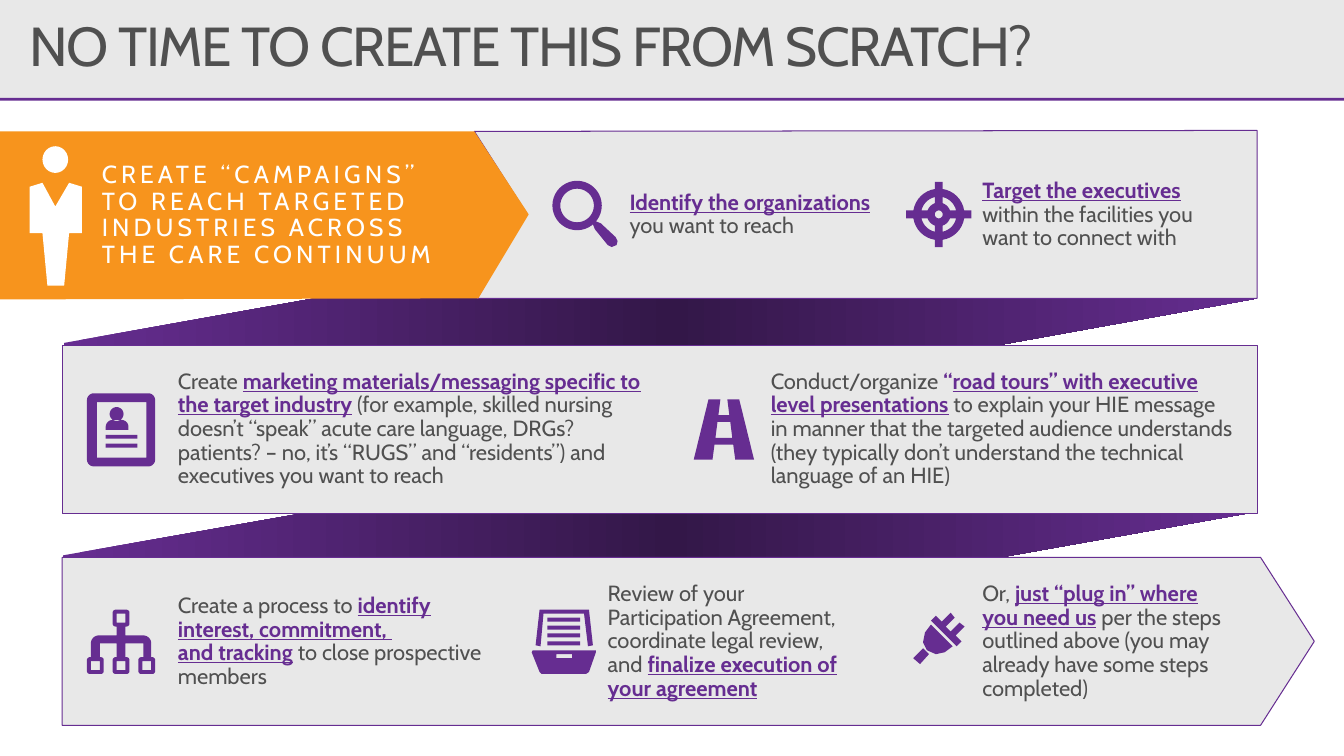
import copy
import math
from dataclasses import dataclass

import pptx
import pptx.dml.color
import pptx.enum.shapes
import pptx.enum.text
import pptx.oxml.ns
import pptx.util
from pptx.util import Inches

Point = tuple[float, float]
Loop = list[Point]

FONT = "Cabin"
PURPLE, DARK, GRAY, ORANGE, WHITE, INK = (
    "662D91", "331748", "E8E8E8", "F7941D", "FFFFFF", "505050")
SHAPE = pptx.enum.shapes.MSO_SHAPE


@dataclass
class Step:
    """Text with *key phrases* between stars, and the loops of its icon."""
    left: float
    top: float
    width: float
    text: str
    icon: list[Loop]


def color(code: str) -> pptx.dml.color.RGBColor:
    return pptx.dml.color.RGBColor.from_string(code)


def arc(x: float, y: float, r: float, start: float = 0, end: float = 360) -> Loop:
    """Points along a circle, with angles in degrees."""
    count = max(4, round(abs(end - start) / 9))
    turns = [math.radians(start + (end - start) * i / count) for i in range(count + 1)]
    return [(x + r * math.cos(t), y + r * math.sin(t)) for t in turns]


def box(x: float, y: float, w: float, h: float, r: float = 0) -> Loop:
    """A rectangle with corners rounded by r."""
    if not r:
        return [(x, y), (x + w, y), (x + w, y + h), (x, y + h)]
    spots = [(x + w - r, y + h - r), (x + r, y + h - r), (x + r, y + r), (x + w - r, y + r)]
    return [p for i, (cx, cy) in enumerate(spots) for p in arc(cx, cy, r, 90 * i, 90 * i + 90)]


def card() -> list[Loop]:
    lines = [box(1.07, y, 0.32, 0.04) for y in (4.4, 4.49)]
    bust = arc(1.14, 4.32, 0.07, 180, 270) + arc(1.23, 4.32, 0.07, 270, 360)
    return [box(0.88, 3.98, 0.69, 0.74, 0.07), box(0.98, 4.07, 0.5, 0.56), *lines,
            arc(1.18, 4.19, 0.07), bust + [(1.3, 4.35), (1.07, 4.35)]]


def lens() -> list[Loop]:
    grip = [(6, 2.27), (6.03, 2.24), (6.08, 2.26), (6.23, 2.4), (6.25, 2.44),
            (6.24, 2.48), (6.19, 2.5), (6.15, 2.48), (6.02, 2.32)]
    return [arc(5.84, 2.08, 0.25), arc(5.84, 2.08, 0.17), grip]


def target() -> list[Loop]:
    x, y, half, reach = 9.5, 2.17, 0.04, 0.33

    def bend(r: float, turn: int) -> Loop:
        gap = math.degrees(math.asin(half / r))
        return arc(x, y, r, turn + gap, turn + 90 - gap)

    edge, gaps = [], []
    for turn in range(0, 360, 90):
        c, s = round(math.cos(math.radians(turn))), round(math.sin(math.radians(turn)))
        edge += [(x + reach * c - side * s, y + reach * s + side * c) for side in (-half, half)]
        edge += bend(0.26, turn)
        gaps.append(bend(0.18, turn) + bend(0.12, turn)[::-1])
    return [edge, *gaps, arc(x, y, half)]


def road() -> list[Loop]:
    edge = [(7.44, 4.65), (7.63, 4.65), (7.48, 4.04), (7.36, 4.04), (7.38, 4.2), (7.27, 4.2),
            (7.29, 4.04), (7.17, 4.04), (7.02, 4.65), (7.21, 4.65), (7.23, 4.5), (7.42, 4.5)]
    return [edge, [(7.24, 4.43), (7.26, 4.27), (7.39, 4.27), (7.41, 4.43)]]


def tree() -> list[Loop]:
    nodes = [(1.14, 6.17), (0.88, 6.65), (1.14, 6.65), (1.4, 6.65)]
    loops = [box(x, y, 0.17, 0.17, 0.03) for x, y in nodes]
    loops += [box(x + 0.04, y + 0.04, 0.09, 0.09) for x, y in nodes]
    beam = arc(1, 6.51, 0.08, 180, 270) + arc(1.45, 6.51, 0.08, 270, 360)
    beam += [(1.53, 6.65), (1.45, 6.65), (1.45, 6.51), (1.27, 6.51), (1.27, 6.65),
             (1.18, 6.65), (1.18, 6.51), (1.01, 6.51), (1.01, 6.65), (0.92, 6.65)]
    return loops + [beam, box(1.18, 6.34, 0.09, 0.09)]


def tray() -> list[Loop]:
    sheet = [(5.96, 6.17), (6, 6.53), (5.95, 6.54), (5.91, 6.21),
             (5.5, 6.21), (5.47, 6.54), (5.42, 6.53), (5.46, 6.17)]
    base = [(5.39, 6.58), (6.03, 6.58), (6.03, 6.6), (5.96, 6.8), (5.93, 6.82),
            (5.48, 6.82), (5.46, 6.8), (5.38, 6.6)]
    lines = [box(5.54, 6.25 + 0.08 * i, 0.33, 0.04) for i in range(4)]
    return [sheet, *lines, base, box(5.63, 6.62, 0.16, 0.04)]


def plug() -> list[Loop]:
    prongs = [(9.76, 6.34), (9.71, 6.3), (9.62, 6.39), (9.57, 6.34), (9.66, 6.25), (9.62, 6.2),
              (9.53, 6.29), (9.47, 6.23), (9.42, 6.28), (9.68, 6.54), (9.73, 6.49), (9.67, 6.43)]
    body = [(9.42, 6.32), (9.64, 6.54), (9.56, 6.6), (9.47, 6.62), (9.38, 6.58),
            (9.34, 6.5), (9.36, 6.4)]
    return [prongs, body, [(9.34, 6.56), (9.4, 6.62), (9.31, 6.72), (9.24, 6.66)]]


def paint(shape, fill: str, line: str = ""):
    shape.shadow.inherit = False
    shape.fill.solid()
    shape.fill.fore_color.rgb = color(fill)
    if line:
        shape.line.color.rgb = color(line)
        shape.line.width = pptx.util.Pt(0.75)
    else:
        shape.line.fill.background()
    return shape


def block(kind, left: float, top: float, width: float, height: float, fill: str, line: str = ""):
    shape = slide.shapes.add_shape(kind, *map(Inches, (left, top, width, height)))
    return paint(shape, fill, line)


def trace(loops: list[Loop], fill: str, line: str = ""):
    """Draw closed loops as one shape; inner loops become holes."""
    paths = [[(Inches(x), Inches(y)) for x, y in loop] for loop in loops]
    pen = slide.shapes.build_freeform(*paths[0][0])
    for i, path_points in enumerate(paths):
        if i:
            pen.move_to(*path_points[0])
        pen.add_line_segments(path_points[1:])
    return paint(pen.convert_to_shape(), fill, line)


def ribbon(loop: Loop) -> None:
    shape = trace([loop], PURPLE)
    shape.fill.gradient()
    stops = shape.element.find(".//" + pptx.oxml.ns.qn("a:gsLst"))
    stops.append(copy.deepcopy(stops[0]))
    for stop, place, code in zip(shape.fill.gradient_stops, (0, 0.51, 1), (PURPLE, DARK, PURPLE)):
        stop.position = place
        stop.color.rgb = color(code)
    shape.fill.gradient_angle = 0


def write(shape, text: str, size: int, code: str, track: int = 0) -> None:
    """Fill a shape with text; track is letter spacing in hundredths of a point."""
    frame = shape.text_frame
    frame.word_wrap = True
    frame.auto_size = pptx.enum.text.MSO_AUTO_SIZE.NONE
    frame.vertical_anchor = pptx.enum.text.MSO_ANCHOR.MIDDLE
    frame.margin_left = frame.margin_right = frame.margin_top = frame.margin_bottom = 0
    para = frame.paragraphs[0]
    para.alignment = pptx.enum.text.PP_ALIGN.LEFT
    para.line_spacing = 0.9
    for i, part in enumerate(text.split("*")):
        for j, row in enumerate(part.split("\n")):
            if j:
                para.add_line_break()
            if not row:
                continue
            run = para.add_run()
            run.text = row
            key = i % 2 == 1
            run.font.name, run.font.size = FONT, pptx.util.Pt(size)
            run.font.bold, run.font.underline = key, key and row != "“"
            run.font.color.rgb = color(PURPLE if key else code)
    if track:
        for props in shape.element.iter(pptx.oxml.ns.qn("a:rPr")):
            props.set("spc", str(track))


def label(left: float, top: float, width: float, height: float):
    return slide.shapes.add_textbox(*map(Inches, (left, top, width, height)))


STEPS = [
    Step(6.37, 1.49, 2.79, "*Identify the organizations *you want to reach", lens()),
    Step(9.94, 1.49, 2.6, "*Target the executives *within the facilities you want to connect with", target()),
    Step(1.8, 3.66, 4.75, "Create *marketing materials/messaging specific to the target industry* (for example, skilled nursing doesn’t “speak” acute care language, DRGs? patients? – no, it’s “RUGS” and “residents”) and executives you want to reach", card()),
    Step(7.8, 3.66, 4.7, "Conduct/organize *“**road tours” with executive level presentations* to explain your HIE message in manner that the targeted audience understands (they typically don’t understand the technical language of an HIE)", road()),
    Step(1.8, 5.81, 3.08, "Create a process to *identify interest, commitment, \nand tracking* to close prospective members", tree()),
    Step(6.15, 5.81, 2.44, "Review of your Participation Agreement, coordinate legal review, and *finalize execution of your agreement*", tray()),
    Step(9.94, 5.81, 2.44, "Or, *just “plug in” where you need us* per the steps outlined above (you may already have some steps completed)", plug()),
]

deck = pptx.Presentation()
deck.slide_width, deck.slide_height = Inches(13.6), Inches(7.65)
slide = deck.slides.add_slide(deck.slide_layouts[5])

block(SHAPE.RECTANGLE, 0, 0, 13.6, 0.99, GRAY)
block(SHAPE.RECTANGLE, 0, 0.99, 13.6, 0.03, PURPLE)
title = slide.shapes.title
title.left, title.top, title.width, title.height = map(Inches, (0.3, 0, 11, 0.99))
write(title, "NO TIME TO CREATE THIS FROM SCRATCH?", 40, INK, -100)
title.element.getparent().append(title.element)

ribbon([(0.65, 3.47), (12.72, 1.32), (12.72, 3.02), (0.66, 5.2)])
ribbon([(0.64, 5.62), (12.7, 3.5), (12.71, 5.18), (0.64, 7.33)])
block(SHAPE.PENTAGON, 0.63, 5.64, 12.67, 1.7, GRAY, PURPLE).adjustments[0] = 0.32
block(SHAPE.RECTANGLE, 0.63, 3.5, 12.1, 1.7, GRAY, PURPLE)
trace([[(12.72, 1.32), (12.72, 3.02), (4.83, 3.02), (5.33, 2.16), (4.8, 1.33)]], GRAY, PURPLE)

for step in STEPS:
    write(label(step.left, step.top, step.width, 1.37), step.text, 16, INK)
    trace(step.icon, PURPLE)

trace([[(0, 1.33), (4.8, 1.33), (5.35, 2.17), (4.84, 3.02), (0, 3.03)]], ORANGE)
write(label(1.03, 1.82, 3.68, 0.72),
      "CREATE “CAMPAIGNS” TO REACH TARGETED INDUSTRIES ACROSS THE CARE CONTINUUM", 18, WHITE, 300)
block(SHAPE.OVAL, 0.43, 1.48, 0.26, 0.27, WHITE)
trace([[(0.7, 1.85), (0.56, 2.09), (0.43, 1.85), (0.3, 1.89), (0.3, 2.36), (0.43, 2.36),
        (0.48, 2.89), (0.65, 2.89), (0.7, 2.36), (0.83, 2.36), (0.83, 1.89)]], WHITE)

deck.save("out.pptx")
